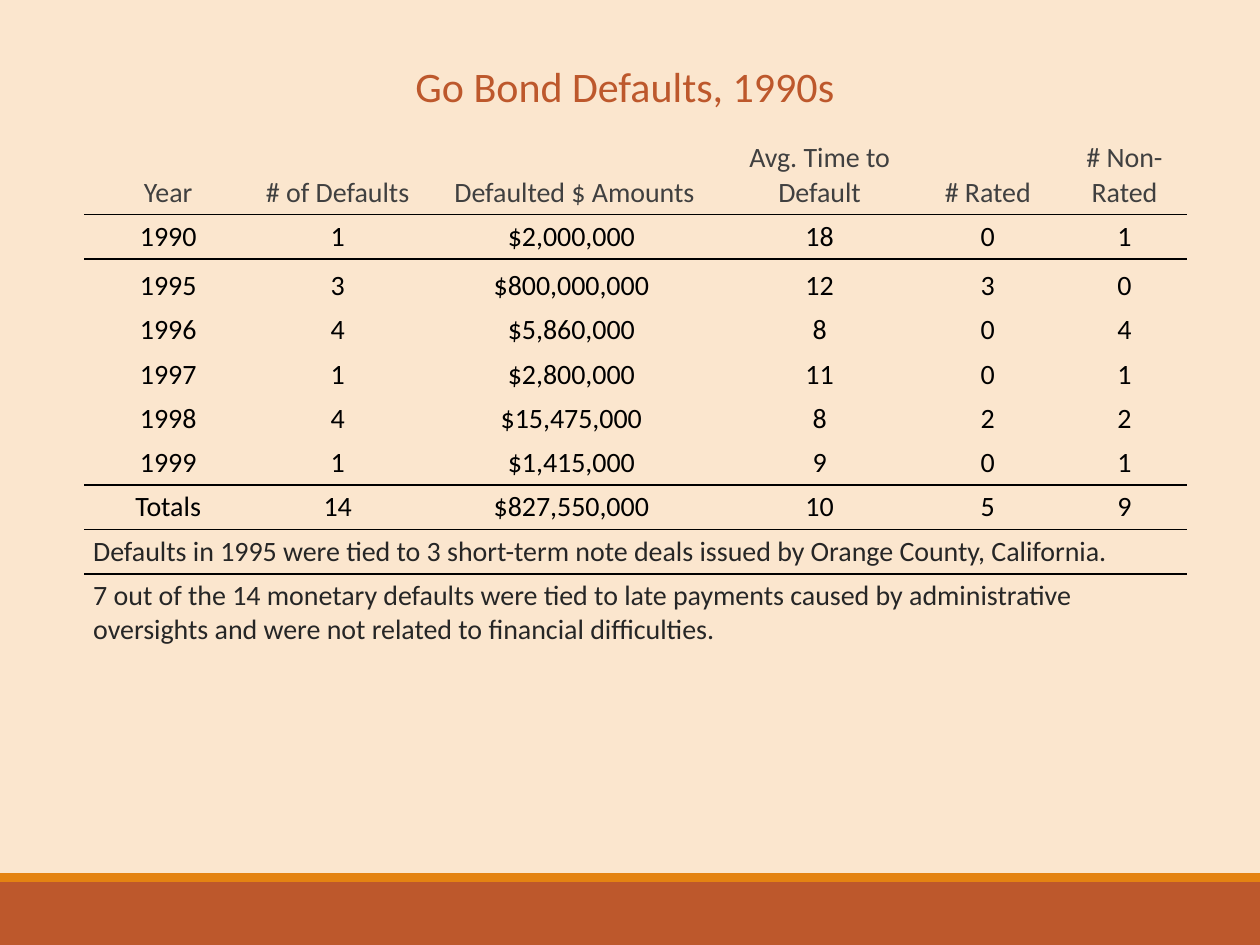
from lxml import etree
from pptx import Presentation
from pptx import util as u
from pptx.dml.color import RGBColor
from pptx.enum import shapes, text
from pptx.oxml.ns import qn

SAND = RGBColor(0xFB, 0xE6, 0xCE)
RUST = RGBColor(0xBD, 0x58, 0x2C)
ORANGE = RGBColor(0xE4, 0x83, 0x12)
HEADER_GREY = RGBColor(0x40, 0x40, 0x40)
NOTE_GREY = RGBColor(0x26, 0x26, 0x26)
BLACK = RGBColor(0, 0, 0)

FONT = "Calibri"
PLAIN_TABLE_STYLE = "{2D5ABB26-0587-4C30-8999-92F81FD0307C}"

HEADERS = ["Year", "# of Defaults", "Defaulted $ Amounts",
           "Avg. Time to Default", "# Rated", "# Non-Rated"]
DEFAULTS = [
    ["1990", "1", "$2,000,000 ", "18", "0", "1"],
    ["1995", "3", "$800,000,000 ", "12", "3", "0"],
    ["1996", "4", "$5,860,000 ", "8", "0", "4"],
    ["1997", "1", "$2,800,000 ", "11", "0", "1"],
    ["1998", "4", "$15,475,000 ", "8", "2", "2"],
    ["1999", "1", "$1,415,000 ", "9", "0", "1"],
    ["Totals", "14", "$827,550,000 ", "10", "5", "9"],
]
NOTES = [
    "Defaults in 1995 were tied to 3 short-term note deals issued by "
    "Orange County, California.",
    "7 out of the 14 monetary defaults were tied to late payments caused by "
    "administrative oversights and were not related to financial difficulties.",
]
COLUMN_WIDTHS = [1.33, 1.36, 2.4, 1.49, 1.18, 0.99]
ROW_HEIGHTS = [0.59, 0.33, 0.39] + [0.33] * 6 + [0.59]


def style_paragraph(paragraph, size, color, align):
    paragraph.alignment = align
    paragraph.font.name = FONT
    paragraph.font.size = u.Pt(size)
    paragraph.font.color.rgb = color


def add_band(slide, top, height, color):
    band = slide.shapes.add_shape(shapes.MSO_SHAPE.RECTANGLE, 0, u.Inches(top),
                                  u.Inches(10), u.Inches(height))
    band.shadow.inherit = False
    band.fill.solid()
    band.fill.fore_color.rgb = color
    band.line.fill.background()


def set_title(slide, wording):
    title = slide.shapes.title
    title.left, title.top = u.Inches(2.67), u.Inches(0.5)
    title.width, title.height = u.Inches(4.58), u.Inches(0.43)
    frame = title.text_frame
    frame.text = wording
    frame.auto_size = text.MSO_AUTO_SIZE.NONE
    frame.vertical_anchor = text.MSO_ANCHOR.MIDDLE
    heading = frame.paragraphs[0]
    heading.line_spacing = 0.8
    style_paragraph(heading, 24, RUST, text.PP_ALIGN.CENTER)


def fill_cell(cell, wording, color, align=text.PP_ALIGN.CENTER):
    cell.text = wording
    cell.fill.background()
    cell.vertical_anchor = text.MSO_ANCHOR.BOTTOM
    cell.margin_left = cell.margin_right = u.Inches(0.07)
    cell.margin_top = cell.margin_bottom = u.Inches(0.04)
    style_paragraph(cell.text_frame.paragraphs[0], 16, color, align)


def add_rule(cell, position, edge):
    """Draw a 1 pt black border; edge is lnT or lnB."""
    border = etree.Element(qn(f"a:{edge}"), w=str(u.Pt(1)))
    solid = etree.SubElement(border, qn("a:solidFill"))
    etree.SubElement(solid, qn("a:srgbClr"), val=str(BLACK))
    cell._tc.get_or_add_tcPr().insert(position, border)


def rule_below(table, row):
    for column in range(len(HEADERS)):
        add_rule(table.cell(row, column),
                 len(table.cell(row, column)._tc.tcPr.findall(qn("a:lnT"))), "lnB")
        add_rule(table.cell(row + 1, column), 0, "lnT")


def add_defaults_table(slide):
    frame = slide.shapes.add_table(
        len(ROW_HEIGHTS), len(COLUMN_WIDTHS), u.Inches(0.67), u.Inches(1.08),
        u.Inches(sum(COLUMN_WIDTHS)), u.Inches(sum(ROW_HEIGHTS)))
    table = frame.table
    table.first_row = table.horz_banding = False
    table._tbl.tblPr.find(qn("a:tableStyleId")).text = PLAIN_TABLE_STYLE
    for column, width in zip(table.columns, COLUMN_WIDTHS):
        column.width = u.Inches(width)
    for row, height in zip(table.rows, ROW_HEIGHTS):
        row.height = u.Inches(height)

    # Header, yearly figures and totals
    for r, values in enumerate([HEADERS] + DEFAULTS):
        for c, value in enumerate(values):
            fill_cell(table.cell(r, c), value, BLACK if r else HEADER_GREY)

    # Notes across the full width
    totals_row = len(DEFAULTS)
    for r, note in enumerate(NOTES, start=totals_row + 1):
        table.cell(r, 0).merge(table.cell(r, len(HEADERS) - 1))
        fill_cell(table.cell(r, 0), note, NOTE_GREY, text.PP_ALIGN.LEFT)

    # Rules under the header, the last year and the totals
    for r in (0, totals_row - 1, totals_row):
        rule_below(table, r)


def main():
    deck = Presentation()
    deck.slide_width, deck.slide_height = u.Inches(10), u.Inches(7.5)
    slide = deck.slides.add_slide(deck.slide_layouts.get_by_name("Title Only"))
    slide.background.fill.solid()
    slide.background.fill.fore_color.rgb = SAND

    # Footer bands
    add_band(slide, 7, 0.5, RUST)
    add_band(slide, 6.93, 0.07, ORANGE)

    add_defaults_table(slide)
    set_title(slide, "Go Bond Defaults, 1990s")
    deck.save("out.pptx")


if __name__ == "__main__":
    main()
